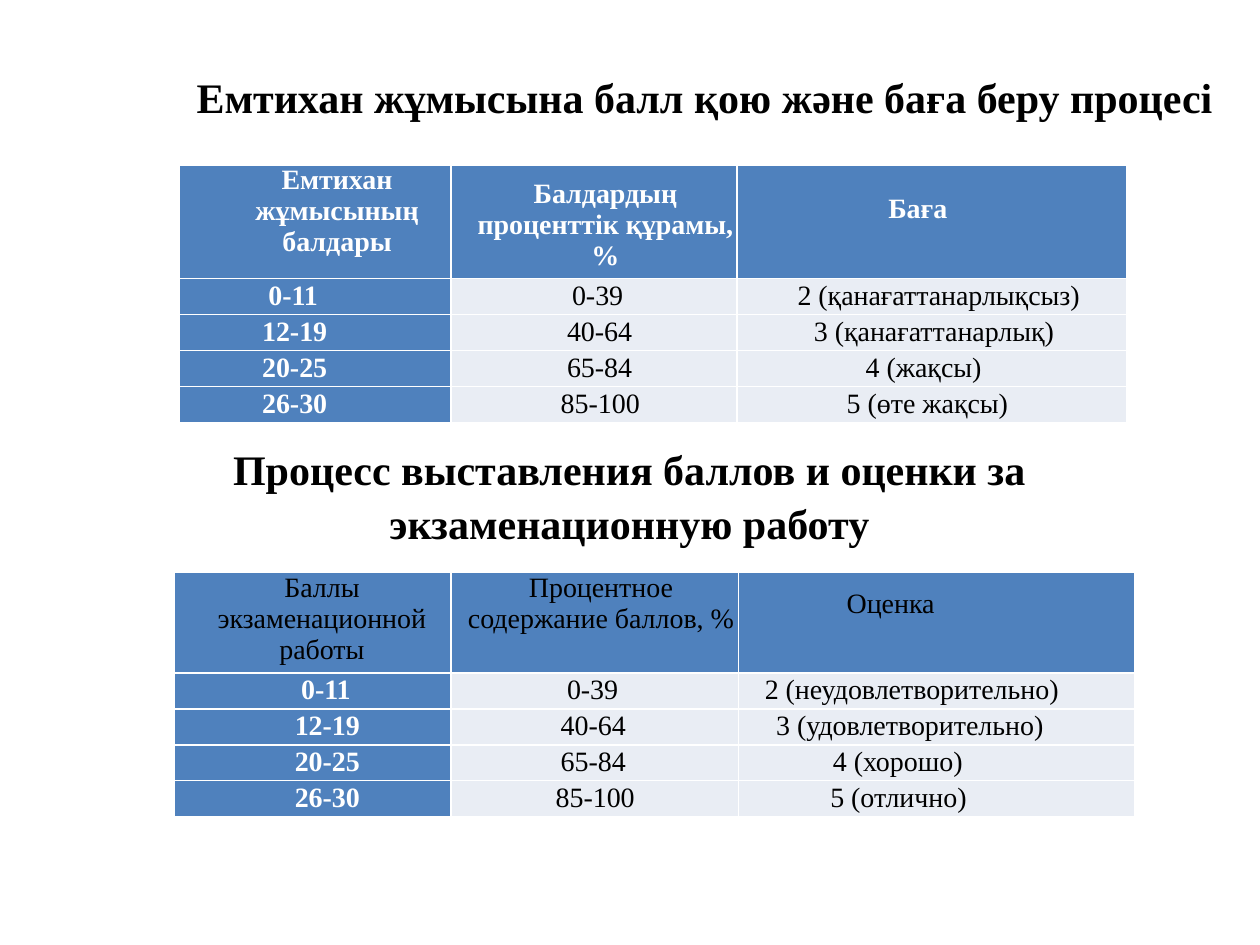
"""Build a slide with the Kazakh and Russian exam grading scales."""
from dataclasses import dataclass

from lxml import etree
from pptx import Presentation
from pptx.dml.color import RGBColor
from pptx.enum.text import MSO_ANCHOR, MSO_AUTO_SIZE, PP_ALIGN
from pptx.oxml.ns import qn
from pptx.util import Inches, Pt

LEFT, CENTER = PP_ALIGN.LEFT, PP_ALIGN.CENTER
TOP = MSO_ANCHOR.TOP
GROW = MSO_AUTO_SIZE.SHAPE_TO_FIT_TEXT
TITLE_ONLY = 5


@dataclass(frozen=True)
class Theme:
    """Colours and type of the slide."""
    font: str = "Times New Roman"
    heading_size: int = 24
    table_size: int = 16
    line_spacing: float = 1.07
    black: RGBColor = RGBColor(0x00, 0x00, 0x00)
    white: RGBColor = RGBColor(0xFF, 0xFF, 0xFF)
    blue: RGBColor = RGBColor(0x4F, 0x81, 0xBD)
    pale: RGBColor = RGBColor(0xE9, 0xED, 0xF4)


@dataclass(frozen=True)
class Header:
    """Text and placement of one column header."""
    text: str
    indent: float
    align: PP_ALIGN = CENTER
    top: float = 0
    spacing: float = 1.0


class GradingSlide:
    """Add styled headings and grading tables to a slide."""

    def __init__(self, slide, theme):
        self.slide = slide
        self.theme = theme

    def style_text(self, paragraph, text, size, color, bold, align=LEFT, indent=0, spacing=1.0):
        """Fill and format one paragraph."""
        paragraph.text = text
        paragraph.alignment = align
        paragraph.line_spacing = spacing
        paragraph._p.get_or_add_pPr().set("marL", str(Inches(indent)))
        font = paragraph.font
        font.name, font.size, font.bold = self.theme.font, Pt(size), bold
        font.color.rgb = color

    def heading(self, shape, text, box, wrap, **layout):
        """Place a heading in the given shape."""
        shape.left, shape.top, shape.width, shape.height = map(Inches, box)
        frame = shape.text_frame
        frame.word_wrap = wrap
        frame.auto_size = GROW
        frame.vertical_anchor = TOP
        self.style_text(frame.paragraphs[0], text, self.theme.heading_size,
                        self.theme.black, True, **layout)

    def title(self, text, box):
        """Place the title on a single line."""
        self.heading(self.slide.shapes.title, text, box, False)

    def subtitle(self, text, box):
        """Add a centred, wrapping heading."""
        holder = self.slide.shapes.add_textbox(*map(Inches, box))
        self.heading(holder, text, box, True, align=CENTER, indent=0.08,
                     spacing=self.theme.line_spacing)

    def cell(self, cell, text, fill, color, bold, top=0, **layout):
        """Fill, outline and letter one table cell."""
        cell.fill.solid()
        cell.fill.fore_color.rgb = fill
        cell.margin_left = cell.margin_right = cell.margin_bottom = 0
        cell.margin_top = Inches(top)
        self.style_text(cell.text_frame.paragraphs[0], text, self.theme.table_size,
                        color, bold, **layout)
        properties = cell._tc.get_or_add_tcPr()
        for position, edge in enumerate(("a:lnL", "a:lnR", "a:lnT", "a:lnB")):
            border = etree.Element(qn(edge), w=str(Pt(1)))
            solid = etree.SubElement(border, qn("a:solidFill"))
            etree.SubElement(solid, qn("a:srgbClr"), val=str(self.theme.white))
            properties.insert(position, border)

    def grading_table(self, origin, widths, heights, headers, header_style, grades):
        """Add a table of scores, percentages and grades."""
        theme = self.theme
        header_height, row_height = heights
        total_height = header_height + row_height * len(grades)
        box = (*origin, sum(widths), total_height)
        table = self.slide.shapes.add_table(
            len(grades) + 1, len(widths), *map(Inches, box)).table
        table.first_row = table.horz_banding = False
        for column, width in zip(table.columns, widths):
            column.width = Inches(width)
        for row in table.rows:
            row.height = Inches(row_height)
        table.rows[0].height = Inches(header_height)
        for column, header in enumerate(headers):
            self.cell(table.cell(0, column), header.text, theme.blue, *header_style,
                      top=header.top, align=header.align, indent=header.indent,
                      spacing=header.spacing)
        score_style = (theme.blue, theme.white, True)
        value_style = (theme.pale, theme.black, False)
        for row, grade in enumerate(grades, start=1):
            for column, (text, indent) in enumerate(grade):
                style = value_style if column else score_style
                self.cell(table.cell(row, column), text, *style,
                          indent=indent, spacing=theme.line_spacing)


def grade_rows(grades, indents):
    """Pair the shared scores and the given grades with their indents."""
    scores = ("0-11", "12-19", "20-25", "26-30")
    percents = ("0-39", "40-64", "65-84", "85-100")
    return [list(zip(texts, row_indents))
            for texts, row_indents in zip(zip(scores, percents, grades), indents)]


def main():
    """Build and save the slide."""
    deck = Presentation()
    deck.slide_width, deck.slide_height = Inches(10), Inches(7.5)
    theme = Theme()
    page = GradingSlide(deck.slides.add_slide(deck.slide_layouts[TITLE_ONLY]), theme)

    page.title("Емтихан жұмысына балл қою және баға беру процесі",
               (1.46, 0.52, 8.35, 0.5))
    page.grading_table(
        (1.42, 1.31), (2.16, 2.27, 3.09), (0.9, 0.28),
        (Header("Емтихан жұмысының балдары", 0.35, spacing=0.99),
         Header("Балдардың проценттік құрамы, %", 0.18, top=0.11, spacing=0.99),
         Header("Баға", 1.2, LEFT, 0.21, theme.line_spacing)),
        (theme.white, True),
        grade_rows(
            ("2 (қанағаттанарлықсыз)", "3 (қанағаттанарлық)",
             "4 (жақсы)", "5 (өте жақсы)"),
            ((0.71, 0.96, 0.48), (0.66, 0.92, 0.61),
             (0.66, 0.92, 1.02), (0.66, 0.87, 0.87))))

    page.subtitle("Процесс выставления баллов и оценки за экзаменационную работу",
                  (0.35, 3.44, 9.21, 0.97))
    page.grading_table(
        (1.38, 4.54), (2.2, 2.28, 3.15), (0.8, 0.28),
        (Header("Баллы экзаменационной работы", 0.15),
         Header("Процентное содержание баллов, %", 0.1),
         Header("Оценка", 0.86, LEFT, 0.11, theme.line_spacing)),
        (theme.black, False),
        grade_rows(
            ("2 (неудовлетворительно)", "3 (удовлетворительно)",
             "4 (хорошо)", "5 (отлично)"),
            ((1.01, 0.92, 0.21), (0.96, 0.87, 0.3),
             (0.96, 0.87, 0.75), (0.96, 0.83, 0.73))))

    deck.save("out.pptx")


if __name__ == "__main__":
    main()
